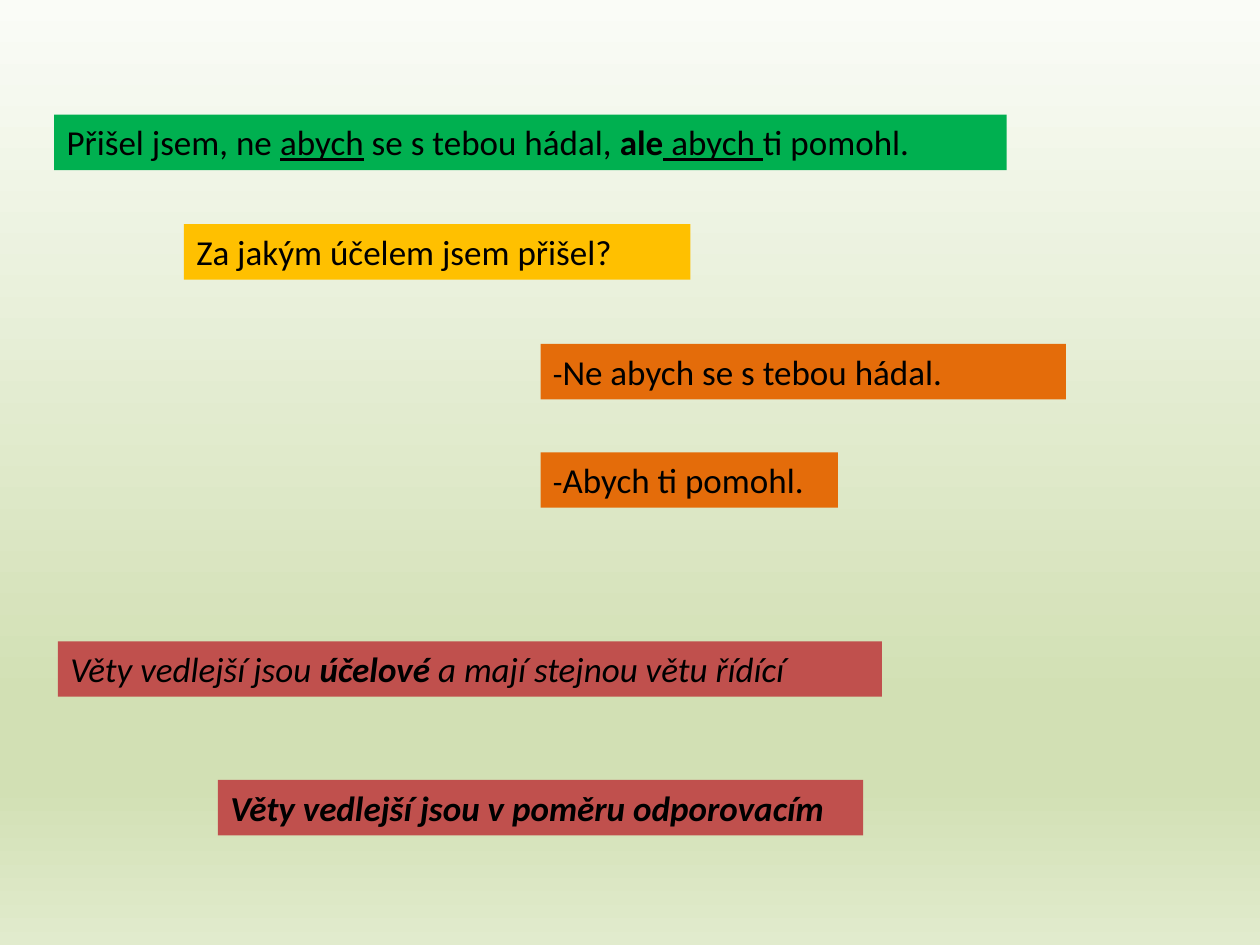
import lxml.etree
import pptx
import pptx.dml.color
import pptx.enum.text
import pptx.oxml.ns
import pptx.util

Inches = pptx.util.Inches
RGBColor = pptx.dml.color.RGBColor

BLACK = RGBColor(0x00, 0x00, 0x00)
GREEN = RGBColor(0x00, 0xB0, 0x50)
YELLOW = RGBColor(0xFF, 0xC0, 0x00)
ORANGE = RGBColor(0xE4, 0x6C, 0x0A)
RED = RGBColor(0xC0, 0x50, 0x4D)
PALE = RGBColor(0xFA, 0xFC, 0xF7)
OLIVE = RGBColor(0xD2, 0xE0, 0xB4)
LIGHT_OLIVE = RGBColor(0xE1, 0xEB, 0xCD)

BACKGROUND_STOPS = [(0, PALE), (74, OLIVE), (83, OLIVE), (100, LIGHT_OLIVE)]
BAR_HEIGHT = Inches(0.44)
ANSWER_LEFT = Inches(4.29)


def paint_background(page):
    """Fill the page with a vertical gradient."""
    fill = page.background.fill
    fill.gradient()
    fill.gradient_angle = 270
    name = pptx.oxml.ns.qn
    stop_list = next(page.element.iter(name("a:gsLst")))
    for stop in list(stop_list):
        stop_list.remove(stop)
    for percent, color in BACKGROUND_STOPS:
        stop = lxml.etree.SubElement(stop_list, name("a:gs"), pos=str(percent * 1000))
        lxml.etree.SubElement(stop, name("a:srgbClr"), val=str(color))


def add_text(para, text, size=20, bold=False, italic=False, underline=False):
    """Append a formatted span of text to a paragraph."""
    span = para.add_run()
    span.text = text
    font = span.font
    font.name = "Calibri"
    font.size = pptx.util.Pt(size)
    font.bold = bold
    font.italic = italic
    font.underline = underline
    font.color.rgb = BLACK


def add_bar(page, left, top, width, color):
    """Place a coloured text bar and return its paragraph."""
    box = page.shapes.add_textbox(left, top, width, BAR_HEIGHT)
    box.fill.solid()
    box.fill.fore_color.rgb = color
    frame = box.text_frame
    frame.word_wrap = True
    frame.auto_size = pptx.enum.text.MSO_AUTO_SIZE.SHAPE_TO_FIT_TEXT
    return frame.paragraphs[0]


def add_example(page, left, top, width):
    """Place the example sentence with its conjunctions marked."""
    para = add_bar(page, left, top, width, GREEN)
    add_text(para, "Přišel jsem, ne ")
    add_text(para, "abych", underline=True)
    add_text(para, " se s tebou hádal,")
    add_text(para, " ale", bold=True)
    add_text(para, " ", bold=True, underline=True)
    add_text(para, "abych ", underline=True)
    add_text(para, "ti pomohl.")


def add_question(page, left, top, width):
    """Place the question about the purpose."""
    para = add_bar(page, left, top, width, YELLOW)
    add_text(para, "Za jakým účelem jsem přišel?")


def add_answer(page, left, top, width, text):
    """Place one answer led by a small dash."""
    para = add_bar(page, left, top, width, ORANGE)
    add_text(para, "-", size=18)
    add_text(para, text)


def add_clause_type(page, left, top, width):
    """Place the conclusion about the type of clause."""
    para = add_bar(page, left, top, width, RED)
    add_text(para, "Věty vedlejší jsou ", italic=True)
    add_text(para, "účelové", bold=True, italic=True)
    add_text(para, " a mají stejnou větu řídící", italic=True)


def add_clause_relation(page, left, top, width):
    """Place the conclusion about the relation of the clauses."""
    para = add_bar(page, left, top, width, RED)
    add_text(para, "Věty vedlejší jsou v poměru odporovacím", bold=True, italic=True)


def main():
    """Build the slide and save the deck."""
    deck = pptx.Presentation()
    deck.slide_width = Inches(10)
    deck.slide_height = Inches(7.5)
    page = deck.slides.add_slide(deck.slide_layouts[6])
    paint_background(page)
    add_example(page, Inches(0.43), Inches(0.91), Inches(7.56))
    add_question(page, Inches(1.46), Inches(1.78), Inches(4.02))
    add_answer(page, ANSWER_LEFT, Inches(2.73), Inches(4.17), "Ne abych se s tebou hádal.")
    add_answer(page, ANSWER_LEFT, Inches(3.59), Inches(2.36), "Abych ti pomohl.")
    add_clause_type(page, Inches(0.46), Inches(5.09), Inches(6.54))
    add_clause_relation(page, Inches(1.73), Inches(6.19), Inches(5.12))
    deck.save("out.pptx")


if __name__ == "__main__":
    main()
